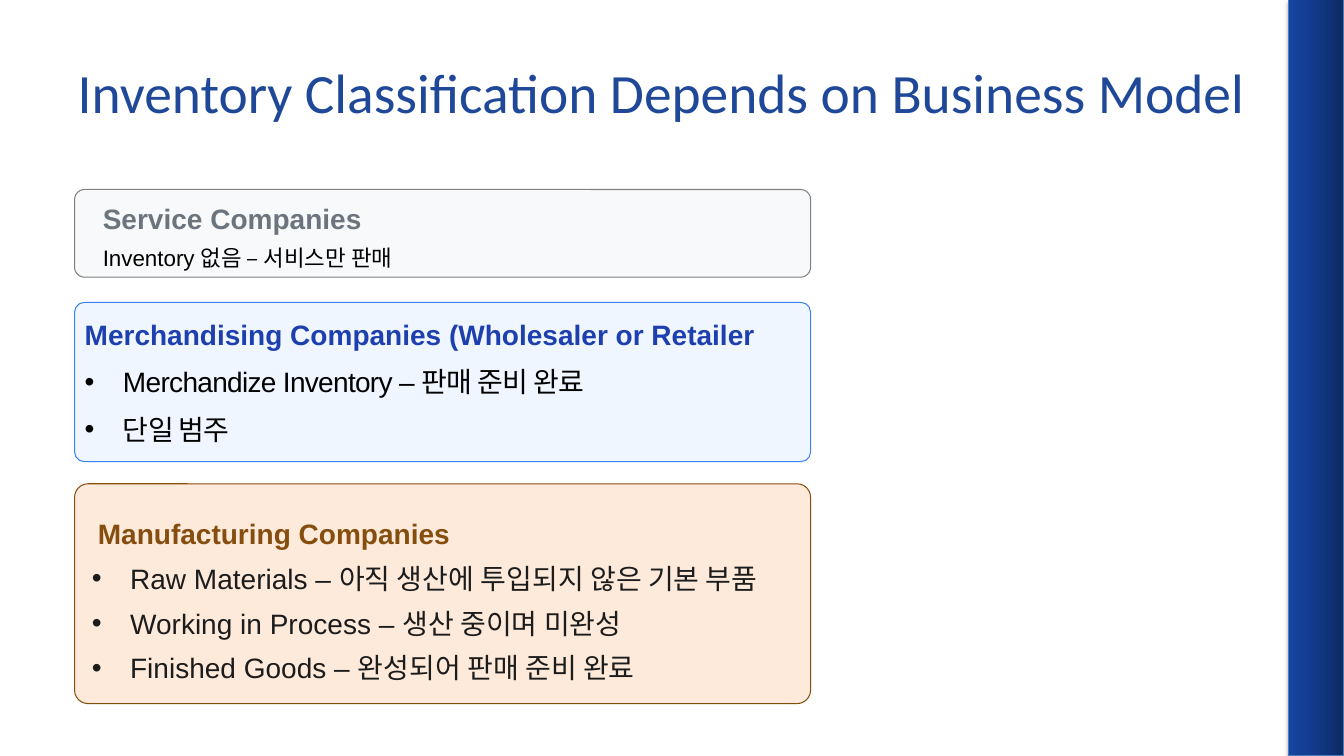
"""Build a slide on how inventory is classified by business model."""
from copy import deepcopy
from dataclasses import dataclass

from lxml.etree import SubElement
from pptx import Presentation
from pptx.dml.color import RGBColor
from pptx.enum.shapes import MSO_SHAPE
from pptx.enum.text import MSO_ANCHOR, MSO_AUTO_SIZE, PP_ALIGN
from pptx.oxml.ns import qn
from pptx.util import Inches, Pt

TITLE = "Inventory Classification Depends on Business Model"
COMPANIES = [
    dict(heading="Merchandising Companies (Wholesaler or Retailer",
         items=["Merchandize Inventory – 판매 준비 완료", "단일 범주"],
         card=(5.55, 40, 54.76, 21.07), text=(6.3, 42, 52.14, 19.07), corner=0.061,
         look="merchandising", leading=23.8, after=10, tracking=-50, list=1),
    dict(heading="Manufacturing Companies",
         items=["Raw Materials – 아직 생산에 투입되지 않은 기본 부품",
                "Working in Process – 생산 중이며 미완성",
                "Finished Goods – 완성되어 판매 준비 완료"],
         card=(5.55, 64, 54.76, 29.07), text=(6.83, 67.2, 55.81, 26.4), corner=0.061,
         look="manufacturing", leading=30, after=8, heading_indent=0.06, list=2),
    dict(heading="Service Companies", items=["Inventory 없음 – 서비스만 판매"],
         card=(5.55, 25.07, 54.76, 11.6), text=(7.65, 27.33, 36.38, 9.33), corner=0.114,
         look="service", leading=20, after=6),
]
TITLE_AREA = (5.03, 4, 90.85, 16.13)
SIDEBAR_AREA = (95.87, 0, 4.13, 100)


@dataclass(frozen=True)
class Theme:
    """Colours as fill, line, heading and body; type sizes in points."""
    title_font: str = "Calibri"
    body_font: str = "Arial"
    title: str = "1F4899"
    title_size: float = 39.6
    heading_size: float = 20
    note_size: float = 16
    sidebar: tuple = ((0, "0D2960"), (0.5, "123A89"), (1, "1645A2"))
    sidebar_line: str = "4B7EBC"
    merchandising: tuple = ("EFF6FF", "3B82F6", "1E40AF", "010101")
    manufacturing: tuple = ("FDEADA", "854D0E", "854D0E", "1C1C1C")
    service: tuple = ("F8F9FA", "808080", "6C757D", "000000")


THEME = Theme()
deck = Presentation()
deck.slide_width, deck.slide_height = Inches(13.33), Inches(7.5)
slide = deck.slides.add_slide(deck.slide_layouts[3])


def area(shares):
    """Turn percentages of the slide into left, top, width and height."""
    sides = (deck.slide_width, deck.slide_height) * 2
    return [round(side * share / 100) for side, share in zip(sides, shares)]


def move(part, shares):
    """Put a placeholder in its area."""
    part.left, part.top, part.width, part.height = area(shares)


def write(paragraph, text, *, size, color, font=THEME.body_font, bold=False,
          leading=None, after=0, bullet=False, indent=0, tracking=None):
    """Fill one paragraph with formatted text."""
    props = paragraph._p.get_or_add_pPr()
    props.set("marL", str(Inches(0.38 if bullet else indent)))
    props.set("indent", str(Inches(-0.38 if bullet else 0)))
    if bullet:
        SubElement(props, qn("a:buFont")).set("typeface", THEME.body_font)
        SubElement(props, qn("a:buChar")).set("char", "•")
    else:
        SubElement(props, qn("a:buNone"))
    paragraph.alignment = PP_ALIGN.LEFT
    paragraph.space_before, paragraph.space_after = Pt(0), Pt(after)
    if leading:
        paragraph.line_spacing = Pt(leading)
    run = paragraph.add_run()
    run.text = text
    run.font.name, run.font.size, run.font.bold = font, Pt(size), bold
    run.font.color.rgb = RGBColor.from_string(color)
    if tracking:
        run.font._element.set("spc", str(tracking))


def add_panel(kind, shares, line):
    """Add an outlined panel without a theme shadow."""
    panel = slide.shapes.add_shape(kind, *area(shares))
    panel.shadow.inherit = False
    panel.line.color.rgb = RGBColor.from_string(line)
    panel.line.width = Pt(0.75)
    return panel


def add_sidebar():
    """Add the gradient band with its soft shadow."""
    band = add_panel(MSO_SHAPE.RECTANGLE, SIDEBAR_AREA, THEME.sidebar_line)
    band.fill.gradient()
    band.fill.gradient_angle = 180
    stops = band.element.find(".//" + qn("a:gsLst"))
    stops.insert(1, deepcopy(stops[0]))
    for stop, (position, color) in zip(band.fill.gradient_stops, THEME.sidebar):
        stop.position = position
        stop.color.rgb = RGBColor.from_string(color)
    effects = band.element.find(".//" + qn("a:effectLst"))
    shadow = SubElement(effects, qn("a:outerShdw"), blurRad=str(Pt(3.1)),
                        dist=str(Pt(1.8)), dir="5400000", rotWithShape="0")
    shade = SubElement(shadow, qn("a:srgbClr"), val="000000")
    SubElement(shade, qn("a:alpha"), val="35000")


def add_company(company):
    """Add one card with its heading and lines."""
    fill, line, heading_color, body_color = getattr(THEME, company["look"])
    card = add_panel(MSO_SHAPE.ROUNDED_RECTANGLE, company["card"], line)
    card.adjustments[0] = company["corner"]
    card.fill.solid()
    card.fill.fore_color.rgb = RGBColor.from_string(fill)

    listed = "list" in company
    if listed:
        body = slide.placeholders[company["list"]]
        move(body, company["text"])
        card.element.addnext(body.element)
    else:
        body = slide.shapes.add_textbox(*area(company["text"]))
    frame = body.text_frame
    frame.word_wrap, frame.auto_size = True, MSO_AUTO_SIZE.NONE
    frame.vertical_anchor = MSO_ANCHOR.TOP
    frame.margin_left = frame.margin_top = frame.margin_right = frame.margin_bottom = 0

    leading, after = company["leading"], company["after"]
    write(frame.paragraphs[0], company["heading"], size=THEME.heading_size,
          color=heading_color, bold=True, leading=leading, after=after,
          indent=company.get("heading_indent", 0))
    for item in company["items"]:
        write(frame.add_paragraph(), item, color=body_color, after=after, bullet=listed,
              size=THEME.heading_size if listed else THEME.note_size,
              leading=None if listed else leading, tracking=company.get("tracking"))


def main():
    """Assemble and save the slide."""
    add_sidebar()
    title = slide.shapes.title
    move(title, TITLE_AREA)
    title.text_frame.auto_size = MSO_AUTO_SIZE.NONE
    title.text_frame.vertical_anchor = MSO_ANCHOR.MIDDLE
    write(title.text_frame.paragraphs[0], TITLE, size=THEME.title_size,
          color=THEME.title, font=THEME.title_font)
    for company in COMPANIES:
        add_company(company)
    deck.save("out.pptx")


if __name__ == "__main__":
    main()
